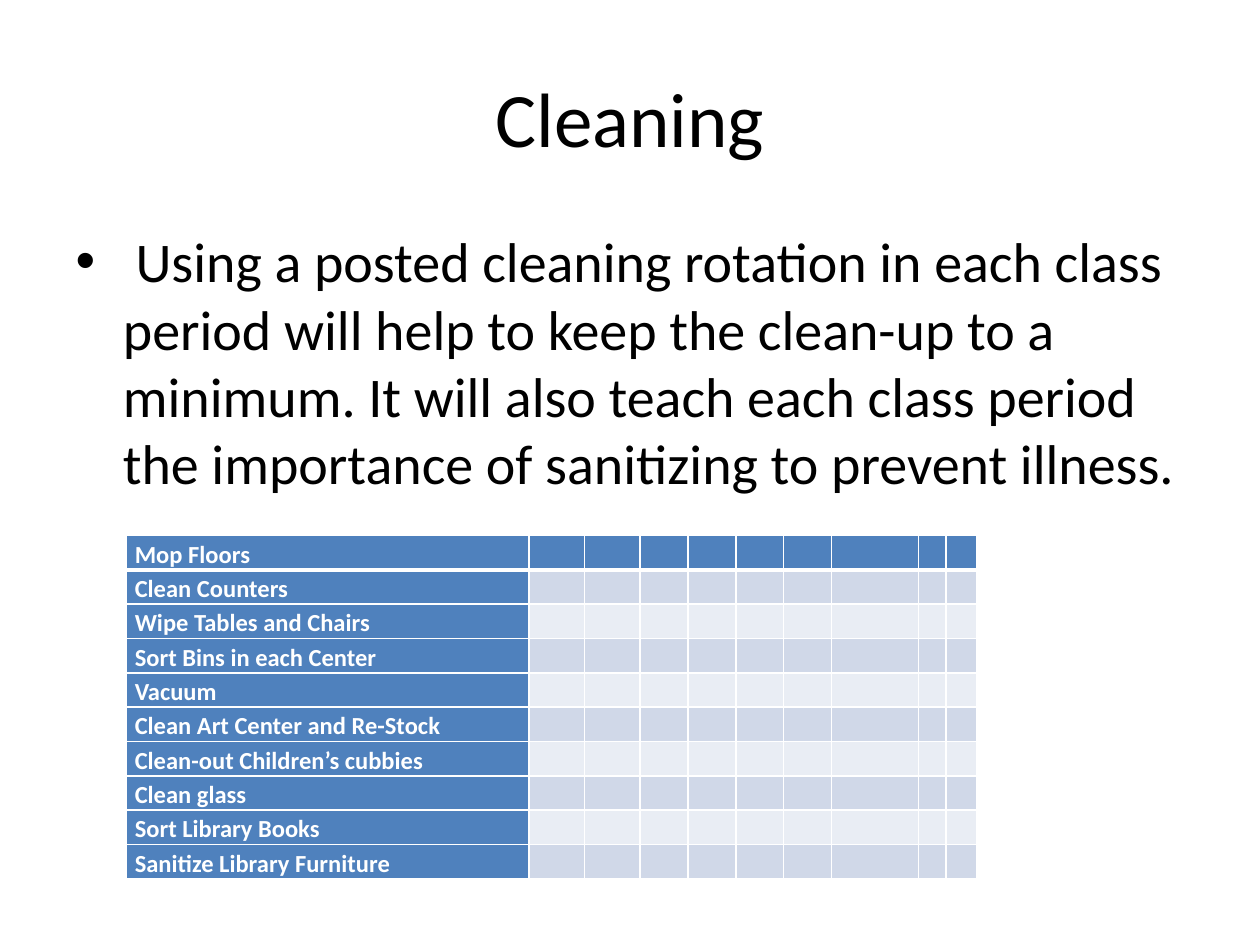
from lxml.etree import SubElement
from pptx import Presentation
from pptx.dml.color import RGBColor
from pptx.enum.text import MSO_ANCHOR, PP_ALIGN
from pptx.oxml.ns import qn
from pptx.util import Inches, Pt

TITLE = "Cleaning"
BODY = (" Using a posted cleaning rotation in each class period will help to keep "
        "the clean-up to a minimum. It will also teach each class period the "
        "importance of sanitizing to prevent illness.")
TASKS = ["Mop Floors", "Clean Counters", "Wipe Tables and Chairs",
         "Sort Bins in each Center", "Vacuum", "Clean Art Center and Re-Stock",
         "Clean-out Children’s cubbies", "Clean glass", "Sort Library Books",
         "Sanitize Library Furniture"]
COLS = [3.2, 0.44, 0.44, 0.38, 0.38, 0.38, 0.38, 0.69, 0.22, 0.24]
ROW_H = 0.27
BLACK = RGBColor(0x00, 0x00, 0x00)
WHITE = RGBColor(0xFF, 0xFF, 0xFF)
BLUE = RGBColor(0x4F, 0x81, 0xBD)
BANDS = [RGBColor(0xE9, 0xED, 0xF4), RGBColor(0xD0, 0xD8, 0xE8)]


def write(tf, text, size, color=BLACK, bold=False, align=None, spacing=None):
    p = tf.paragraphs[0]
    p.alignment = align
    p.line_spacing = spacing
    r = p.add_run()
    r.text = text
    r.font.name = "Calibri"
    r.font.size = Pt(size)
    r.font.bold = bold
    r.font.color.rgb = color


def place(sp, left, top, width, height):
    sp.left, sp.top = Inches(left), Inches(top)
    sp.width, sp.height = Inches(width), Inches(height)


def border(cell, **widths):
    for side, width in widths.items():
        ln = SubElement(cell._tc.get_or_add_tcPr(), qn(f"a:ln{side}"), w=str(Pt(width)))
        fill = SubElement(ln, qn("a:solidFill"))
        SubElement(fill, qn("a:srgbClr"), val=str(WHITE))


def add_rotation(s):
    shape = s.shapes.add_table(len(TASKS), len(COLS), Inches(1), Inches(4.25),
                               Inches(sum(COLS)), Inches(ROW_H * len(TASKS)))
    table = shape.table
    table.first_col = True
    for col, width in zip(table.columns, COLS):
        col.width = Inches(width)
    for i, task in enumerate(TASKS):
        table.rows[i].height = Inches(ROW_H)
        for j in range(len(COLS)):
            cell = table.cell(i, j)
            cell.margin_left = cell.margin_right = Inches(0.07)
            cell.margin_top = cell.margin_bottom = 0
            border(cell, L=1, R=1, T=3 if i == 1 else 1, B=3 if i == 0 else 1)
            cell.fill.solid()
            cell.fill.fore_color.rgb = BLUE if i == 0 or j == 0 else BANDS[i % 2]
            if j == 0:
                write(cell.text_frame, task, 14, WHITE, bold=True, spacing=1.15)
            else:
                SubElement(cell.text_frame.paragraphs[0]._p, qn("a:endParaRPr"), sz="1400")


def main():
    """Build the cleaning rotation slide."""
    prs = Presentation()
    prs.slide_width, prs.slide_height = Inches(10), Inches(7.5)
    s = prs.slides.add_slide(prs.slide_layouts[1])
    title, body = s.placeholders
    place(title, 0.5, 0.3, 9, 1.25)
    title.text_frame.vertical_anchor = MSO_ANCHOR.MIDDLE
    write(title.text_frame, TITLE, 44, align=PP_ALIGN.CENTER)
    place(body, 0.5, 1.75, 9, 4.95)
    write(body.text_frame, BODY, 32)
    add_rotation(s)
    prs.save("out.pptx")


if __name__ == "__main__":
    main()
